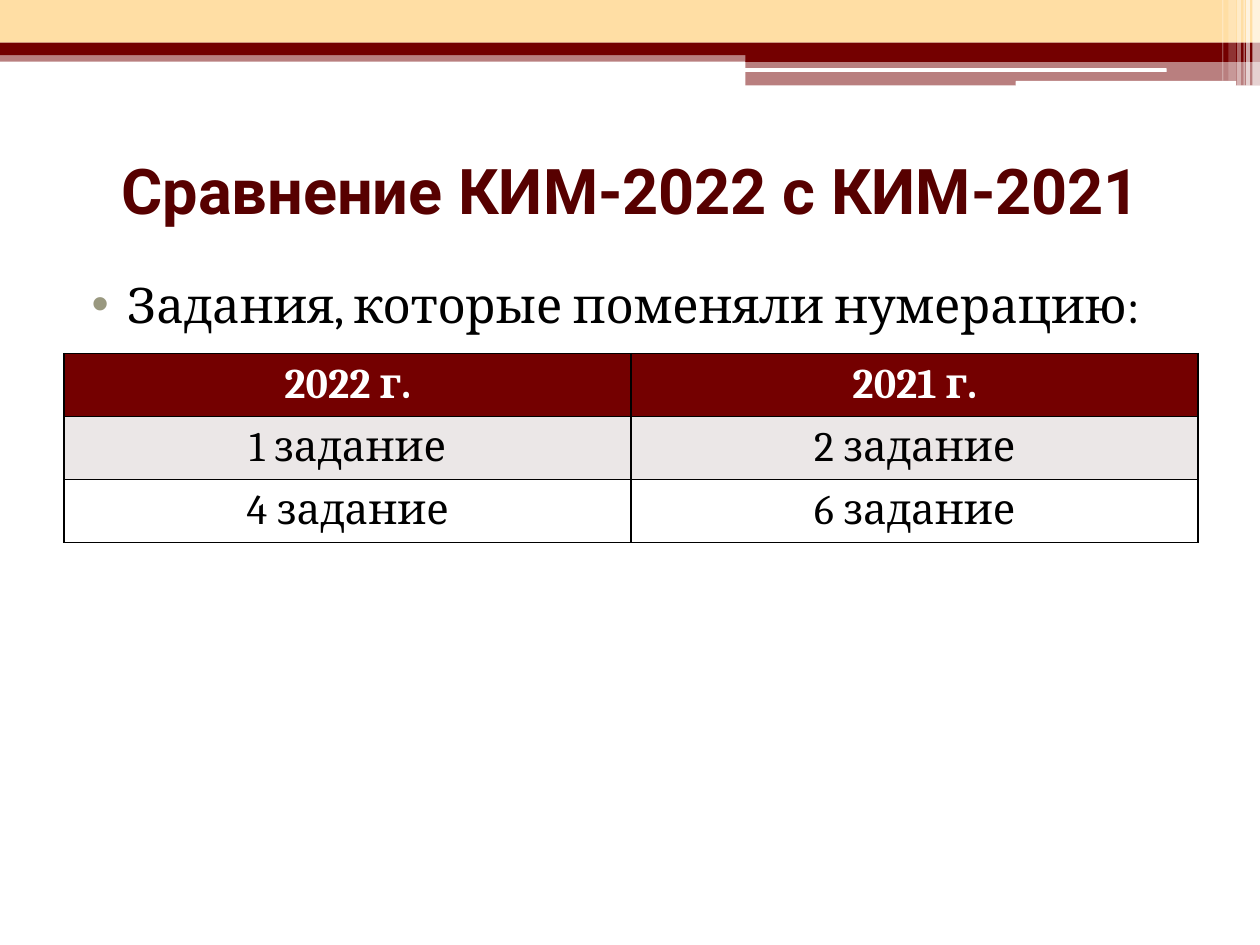
from typing import NamedTuple

from lxml import etree
from pptx import Presentation
from pptx.dml.color import RGBColor
from pptx.enum import shapes, text
from pptx.oxml import ns
from pptx.util import Pt

MAROON = "740000"
WHITE = "FFFFFF"
BLACK = "000000"
LEFT, WIDTH = 36.72, 648


class Bar(NamedTuple):
    left: float
    top: float
    width: float
    height: float
    color: str
    alpha: int = 100
    rounded: bool = False


BARS = [
    Bar(0, 28.8, 720, 6.5, MAROON, 50),
    Bar(0, 0, 720, 24.4, "FFDEA4"),
    Bar(0, 24.4, 720, 7.2, MAROON),
    Bar(426, 28.2, 294, 7.2, MAROON),
    Bar(426, 34.7, 294, 14.1, MAROON, 50),
    Bar(425.5, 39, 241.2, 2.16, WHITE, rounded=True),
    Bar(580.4, 46.2, 126, 2.88, WHITE, rounded=True),
    Bar(715.7, 0, 4.3, 48.96, WHITE, 65),
    Bar(712.1, 0, 2.16, 48.96, WHITE, 65),
    Bar(710.6, 0, 0.72, 48.96, WHITE, 60),
    Bar(707, 0, 2.16, 48.96, WHITE, 40),
    Bar(702, 0, 4.3, 46.1, WHITE, 20),
    Bar(698.4, 0, 0.72, 46.1, WHITE, 30),
]

ROWS = [
    ("2022 г.", "2021 г."),
    ("1 задание", "2 задание"),
    ("4 задание", "6 задание"),
]
ROW_FILLS = [MAROON, "EBE7E7", WHITE]
ROW_HEIGHT = 34.8


def rgb(value: str) -> RGBColor:
    return RGBColor.from_string(value)


def add(parent, tag: str, **attrs: str):
    return etree.SubElement(parent, ns.qn(tag), attrs)


def draw_bar(slide, bar: Bar) -> None:
    kind = shapes.MSO_SHAPE.ROUNDED_RECTANGLE if bar.rounded else shapes.MSO_SHAPE.RECTANGLE
    sp = slide.shapes.add_shape(kind, Pt(bar.left), Pt(bar.top), Pt(bar.width), Pt(bar.height))
    sp.shadow.inherit = False
    sp.line.fill.background()
    sp.fill.solid()
    sp.fill.fore_color.rgb = rgb(bar.color)
    if bar.alpha < 100:
        color = sp._element.spPr.find(ns.qn("a:solidFill"))[0]
        add(color, "a:alpha", val=str(bar.alpha * 1000))


def write(tf, content: str, size: float, font: str, color: str, bold: bool = False,
          align=text.PP_ALIGN.CENTER):
    tf.text = content
    p = tf.paragraphs[0]
    p.alignment = align
    r = p.runs[0]
    r.font.size = Pt(size)
    r.font.name = font
    r.font.bold = bold
    r.font.color.rgb = rgb(color)
    return p


def add_box(slide, top: float, height: float, anchor):
    tf = slide.shapes.add_textbox(Pt(LEFT), Pt(top), Pt(WIDTH), Pt(height)).text_frame
    tf.word_wrap = True
    tf.vertical_anchor = anchor
    return tf


def add_bullet(p, symbol: str, color: str, margin: float, indent: float) -> None:
    pPr = p._p.get_or_add_pPr()
    pPr.set("marL", str(Pt(margin)))
    pPr.set("indent", str(Pt(indent)))
    add(add(pPr, "a:buClr"), "a:srgbClr", val=color)
    add(pPr, "a:buFont", typeface="Arial")
    add(pPr, "a:buChar", char=symbol)


def add_borders(cell, color: str, width: float) -> None:
    tcPr = cell._tc.get_or_add_tcPr()
    for i, side in enumerate(("a:lnL", "a:lnR", "a:lnT", "a:lnB")):
        ln = etree.Element(ns.qn(side), w=str(Pt(width)))
        add(add(ln, "a:solidFill"), "a:srgbClr", val=color)
        tcPr.insert(i, ln)


def draw_table(slide, top: float) -> None:
    frame = slide.shapes.add_table(len(ROWS), len(ROWS[0]), Pt(LEFT), Pt(top),
                                   Pt(WIDTH), Pt(ROW_HEIGHT * len(ROWS)))
    for i, (labels, fill) in enumerate(zip(ROWS, ROW_FILLS)):
        header = i == 0
        for j, label in enumerate(labels):
            cell = frame.table.cell(i, j)
            cell.vertical_anchor = text.MSO_ANCHOR.MIDDLE
            cell.fill.solid()
            cell.fill.fore_color.rgb = rgb(fill)
            write(cell.text_frame, label, 24, "Cambria", WHITE if header else BLACK, header)
            add_borders(cell, BLACK, 1)


def main() -> None:
    prs = Presentation()
    prs.slide_width, prs.slide_height = Pt(720), Pt(540)
    slide = prs.slides.add_slide(prs.slide_layouts[6])
    for bar in BARS:
        draw_bar(slide, bar)
    title = add_box(slide, 66.24, 84.24, text.MSO_ANCHOR.MIDDLE)
    write(title, "Сравнение КИМ-2022 с КИМ-2021", 36, "Roboto", "570000", True)
    body = add_box(slide, 153.36, 340.56, text.MSO_ANCHOR.TOP)
    p = write(body, "Задания, которые поменяли нумерацию:", 28, "Cambria", BLACK,
              align=text.PP_ALIGN.JUSTIFY)
    add_bullet(p, "•", "99987F", 28.8, -20.16)
    draw_table(slide, 202)
    prs.save("out.pptx")


if __name__ == "__main__":
    main()
